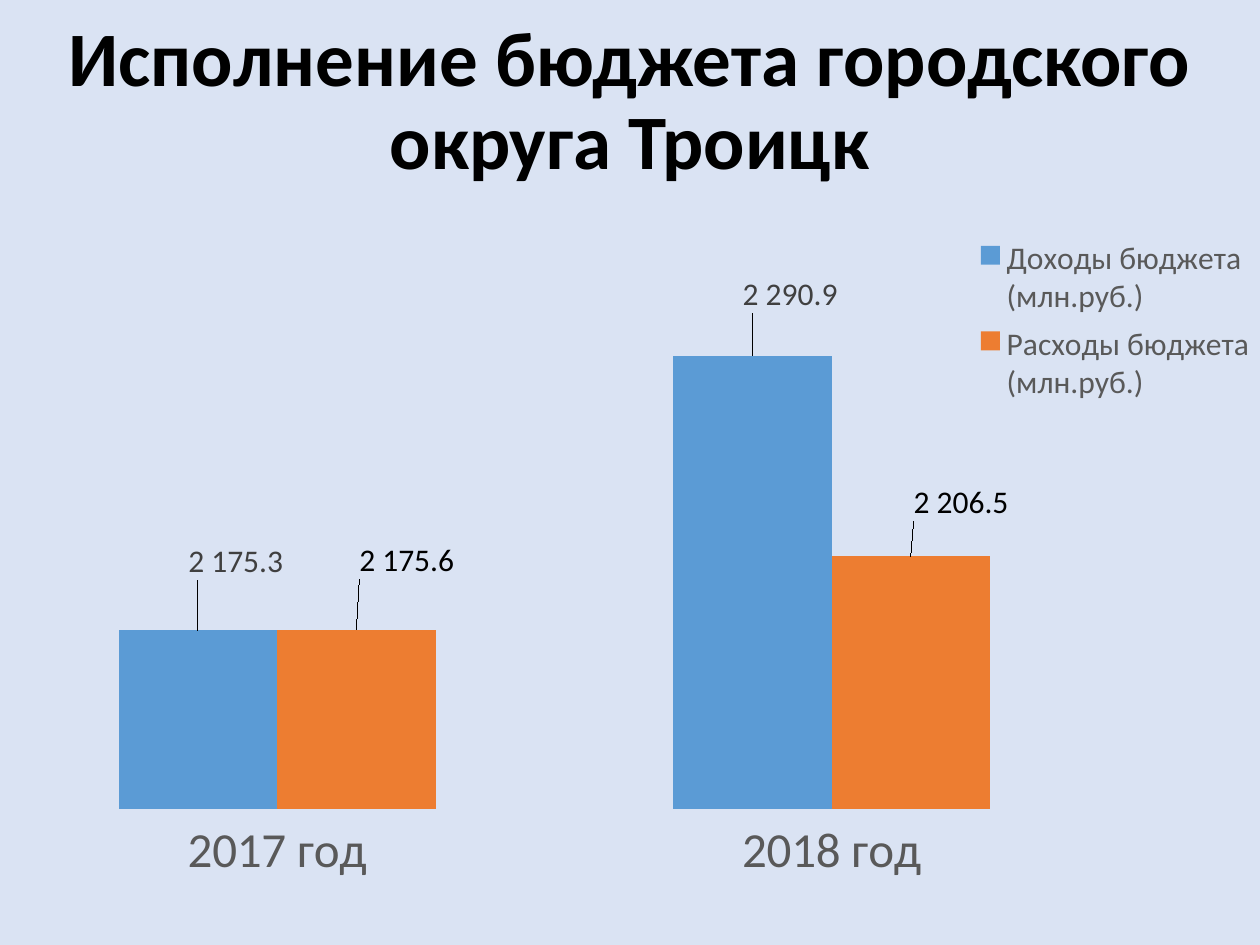
from lxml.etree import SubElement
from pptx import Presentation
from pptx.chart.data import CategoryChartData as ChartData
from pptx.dml.color import RGBColor as Color
from pptx.enum.chart import XL_CHART_TYPE as ChartType
from pptx.enum.chart import XL_LABEL_POSITION as LabelPos
from pptx.enum.chart import XL_LEGEND_POSITION as LegendPos
from pptx.enum.chart import XL_TICK_LABEL_POSITION as TickLabels
from pptx.enum.chart import XL_TICK_MARK as Tick
from pptx.enum.text import MSO_ANCHOR as Anchor
from pptx.enum.text import PP_ALIGN as Align
from pptx.oxml.ns import qn
from pptx.util import Pt

HEADLINE = "Исполнение бюджета городского округа Троицк"
YEARS = ["2017 год", "2018 год"]
BUDGET = [
    {"name": "Доходы бюджета (млн.руб.)", "values": (2175.3, 2290.9),
     "style": "income", "label_shifts": ((0.03, -0.06), (0.03, -0.05))},
    {"name": "Расходы бюджета (млн.руб.)", "values": (2175.6, 2206.5),
     "style": "spending", "label_shifts": ((0.04, -0.06), (0.04, -0.04))},
]
NUMBER_FORMAT = r"#\ ##0.0"
PAGE = (720, 540)
HEADLINE_BOX = (0, 19.5, 720, 90.5)
CHART_BOX = (0, 110, 720, 430)
PLOT_AREA = (0, 0.03, 0.88, 0.79)
LEGEND_AREA = (0.77, 0.05, 0.23, 0.24)
AXIS = {"minimum_scale": 2100, "maximum_scale": 2350, "visible": False,
        "has_major_gridlines": False}
YEAR_AXIS = {"major_tick_mark": Tick.NONE, "minor_tick_mark": Tick.NONE,
             "tick_label_position": TickLabels.LOW, "has_major_gridlines": False}
THEME = {
    "font": "Calibri",
    "background": "DAE3F3",
    "fills": {"income": "5B9BD5", "spending": "ED7D31"},
    "text": {
        "headline": (44, "000000", True),
        "chart": (10, "000000", False),
        "years": (28, "595959", False),
        "legend": (18, "595959", False),
        "income": (18, "404040", False),
        "spending": (18, "000000", False),
    },
}


def apply(target, values):
    """Set every attribute in a dict of format values."""
    for key, value in values.items():
        setattr(target, key, value)


def style_font(font, role):
    """Give a font the theme's look for its role."""
    size, color, bold = THEME["text"][role]
    apply(font, {"name": THEME["font"], "size": Pt(size), "bold": bold})
    font.color.rgb = Color.from_string(color)


def place(parent, index, fractions, inner=False, absolute=True):
    """Put a manual chart layout into a chart part."""
    for old in parent.findall(qn("c:layout")):
        parent.remove(old)
    layout = SubElement(parent, qn("c:layout"))
    parent.insert(index, layout)
    manual = SubElement(layout, qn("c:manualLayout"))
    settings = [("layoutTarget", "inner")] if inner else []
    if absolute:
        settings += [("xMode", "edge"), ("yMode", "edge")]
    settings += zip("xywh", fractions)
    for tag, value in settings:
        SubElement(manual, qn(f"c:{tag}")).set("val", str(value))


def add_headline(slide):
    """Add the slide's headline."""
    frame = slide.shapes.add_textbox(*map(Pt, HEADLINE_BOX)).text_frame
    apply(frame, {"word_wrap": True, "vertical_anchor": Anchor.BOTTOM})
    paragraph = frame.paragraphs[0]
    apply(paragraph, {"text": HEADLINE, "alignment": Align.CENTER, "line_spacing": 0.9})
    style_font(paragraph.runs[0].font, "headline")


def style_series(series, entry):
    """Colour one budget series and place its labels."""
    fill = series.format.fill
    fill.solid()
    fill.fore_color.rgb = Color.from_string(THEME["fills"][entry["style"]])
    labels = series.data_labels
    apply(labels, {"show_value": True, "number_format": NUMBER_FORMAT,
                   "number_format_is_linked": False, "position": LabelPos.OUTSIDE_END})
    style_font(labels.font, entry["style"])
    for index, shift in enumerate(entry["label_shifts"]):
        label = series.points[index].data_label
        style_font(label.font, entry["style"])
        label.position = LabelPos.OUTSIDE_END
    marks = series.data_labels._element.findall(qn("c:dLbl"))
    for mark, shift in zip(marks, entry["label_shifts"]):
        place(mark, 1, shift, absolute=False)
        number = SubElement(mark, qn("c:numFmt"))
        number.set("formatCode", NUMBER_FORMAT)
        number.set("sourceLinked", "0")
        mark.insert(2, number)


def add_budget_chart(slide):
    """Add the column chart of income and spending."""
    data = ChartData(number_format=NUMBER_FORMAT)
    data.categories = YEARS
    for entry in BUDGET:
        data.add_series(entry["name"], entry["values"])
    chart = slide.shapes.add_chart(
        ChartType.COLUMN_CLUSTERED, *map(Pt, CHART_BOX), data).chart
    apply(chart, {"has_title": False, "has_legend": True})
    style_font(chart.font, "chart")
    apply(chart.value_axis, AXIS)
    apply(chart.category_axis, YEAR_AXIS)
    chart.category_axis.format.line.fill.background()
    style_font(chart.category_axis.tick_labels.font, "years")
    apply(chart.legend, {"position": LegendPos.BOTTOM, "include_in_layout": False})
    style_font(chart.legend.font, "legend")
    plot = chart.plots[0]
    apply(plot, {"gap_width": 150, "overlap": 0, "vary_by_categories": False})
    for series, entry in zip(plot.series, BUDGET):
        style_series(series, entry)
    body = chart._chartSpace.find(qn("c:chart"))
    place(body.find(qn("c:plotArea")), 0, PLOT_AREA, inner=True)
    place(body.find(qn("c:legend")), 1, LEGEND_AREA)


def main():
    """Build the budget slide."""
    deck = Presentation()
    deck.slide_width, deck.slide_height = map(Pt, PAGE)
    slide = deck.slides.add_slide(deck.slide_layouts[6])
    fill = slide.background.fill
    fill.solid()
    fill.fore_color.rgb = Color.from_string(THEME["background"])
    add_headline(slide)
    add_budget_chart(slide)
    deck.save("out.pptx")


if __name__ == "__main__":
    main()
